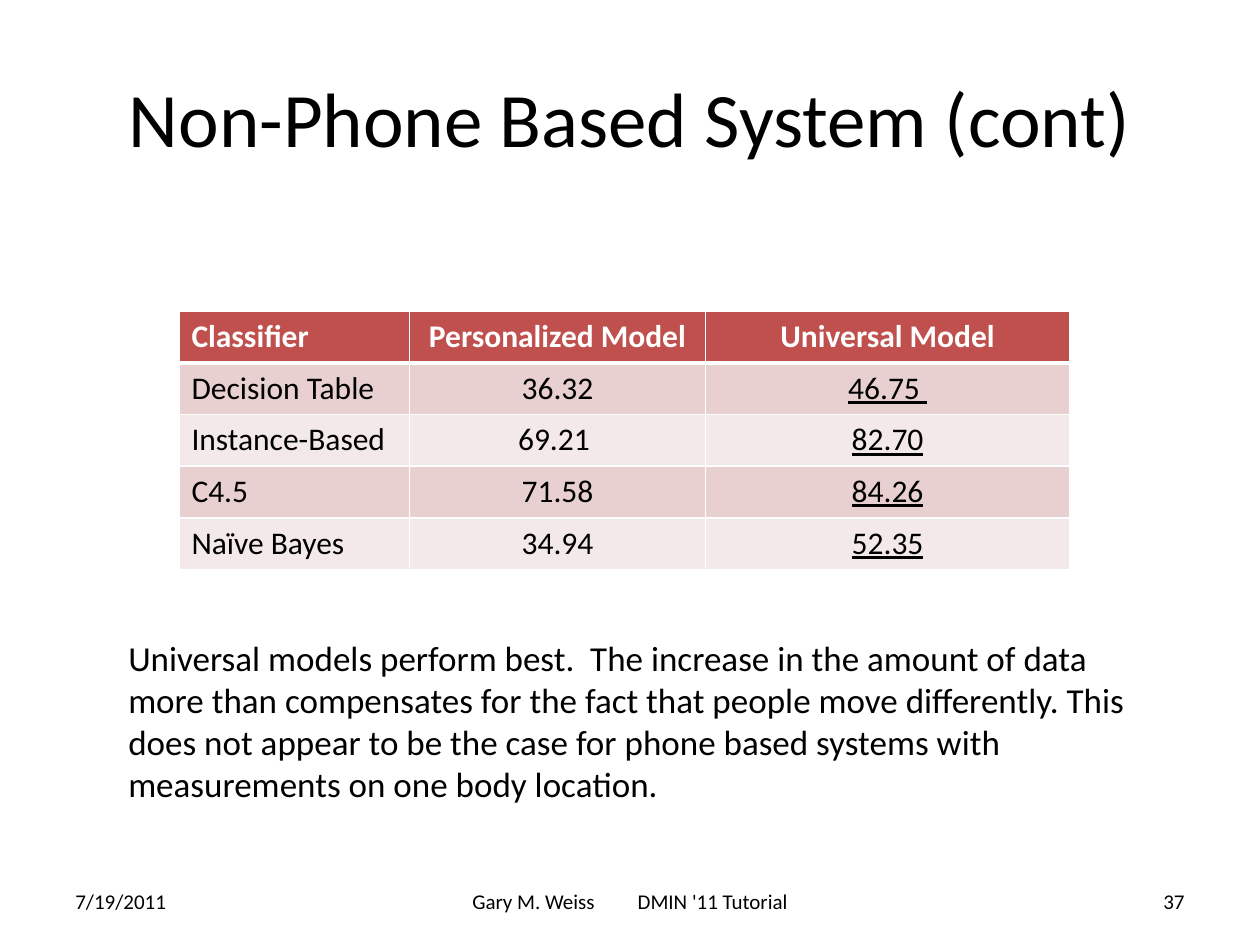
"""Build the slide comparing personalized and universal classifier models."""
from lxml import etree
from pptx import Presentation
from pptx import util as u
from pptx.dml.color import RGBColor
from pptx.enum import text
from pptx.oxml.ns import qn

WIDTH, HEIGHT = 10, 7.5
FONT, BLACK, WHITE = "Calibri", "000000", "FFFFFF"
HEADER_FILL, BAND_FILLS = "C0504D", ("E8D0D0", "F4E9E9")
LEFT, CENTER, RIGHT = text.PP_ALIGN.LEFT, text.PP_ALIGN.CENTER, text.PP_ALIGN.RIGHT
TOP, MIDDLE = text.MSO_ANCHOR.TOP, text.MSO_ANCHOR.MIDDLE

TITLE = "Non-Phone Based System (cont)"
RESULTS = [
    ("Classifier", "Personalized Model", "Universal Model"),
    ("Decision Table", "36.32", "46.75 "),
    ("Instance-Based", "69.21 ", "82.70"),
    ("C4.5", "71.58", "84.26"),
    ("Naïve Bayes", "34.94", "52.35"),
]
CONCLUSION = (
    "Universal models perform best.  The increase in the amount of data more than "
    "compensates for the fact that people move differently. This does not appear to be "
    "the case for phone based systems with measurements on one body location."
)
DATE, AUTHOR, EVENT, NUMBER = "7/19/2011", "Gary M. Weiss", "DMIN '11 Tutorial", "37"

MARGIN = 0.05 * WIDTH
FOOTER_TOP, FOOTER_HEIGHT, SIDE_WIDTH, MIDDLE_WIDTH = 6.95, 0.4, 2.33, 3.17
TABLE_LEFT, TABLE_TOP, ROW_HEIGHT = 1.42, 2.47, 0.41
COLUMN_WIDTHS = (1.83, 2.35, 2.89)
FOOTER_GAP = 21.7


def color(value):
    return RGBColor.from_string(value)


def add_span(para, words, size, ink=BLACK, bold=False, underline=False, tracking=0):
    span = para.add_run()
    span.text = words
    font = span.font
    font.name, font.size, font.bold, font.underline = FONT, u.Pt(size), bold, underline
    font.color.rgb = color(ink)
    if tracking:
        span._r.get_or_add_rPr().set("spc", str(round(tracking * 100)))


def add_box(page, area, spans, size, align=LEFT, anchor=MIDDLE):
    box = page.shapes.add_textbox(*map(u.Inches, area))
    frame = box.text_frame
    frame.word_wrap, frame.vertical_anchor = True, anchor
    para = frame.paragraphs[0]
    para.alignment = align
    for words, tracking in spans:
        add_span(para, words, size, tracking=tracking)


def add_borders(cell, row):
    weights = {"L": 1, "R": 1, "T": 3 if row == 1 else 1, "B": 3 if row == 0 else 1}
    properties = cell._tc.get_or_add_tcPr()
    for side, weight in weights.items():
        line = etree.SubElement(properties, qn(f"a:ln{side}"), w=str(u.Pt(weight)))
        fill = etree.SubElement(line, qn("a:solidFill"))
        etree.SubElement(fill, qn("a:srgbClr"), val=WHITE)


def add_results(page):
    rows, columns = len(RESULTS), len(COLUMN_WIDTHS)
    area = (TABLE_LEFT, TABLE_TOP, sum(COLUMN_WIDTHS), rows * ROW_HEIGHT)
    table = page.shapes.add_table(rows, columns, *map(u.Inches, area)).table
    for column, width in zip(table.columns, COLUMN_WIDTHS):
        column.width = u.Inches(width)
    for r, record in enumerate(RESULTS):
        header = r == 0
        for c, words in enumerate(record):
            cell = table.cell(r, c)
            add_borders(cell, r)
            cell.fill.solid()
            cell.fill.fore_color.rgb = color(HEADER_FILL if header else BAND_FILLS[(r - 1) % 2])
            para = cell.text_frame.paragraphs[0]
            para.alignment = CENTER if c else LEFT
            best = not header and c == columns - 1
            add_span(para, words, 18, WHITE if header else BLACK, header, best)


def add_footer(page):
    parts = [
        (MARGIN, SIDE_WIDTH, [(DATE, 0)], LEFT),
        ((WIDTH - MIDDLE_WIDTH) / 2, MIDDLE_WIDTH,
         [(AUTHOR, 0), (" ", FOOTER_GAP), (EVENT, 0)], CENTER),
        (WIDTH - MARGIN - SIDE_WIDTH, SIDE_WIDTH, [(NUMBER, 0)], RIGHT),
    ]
    for left, width, spans, align in parts:
        add_box(page, (left, FOOTER_TOP, width, FOOTER_HEIGHT), spans, 12, align)


def main():
    deck = Presentation()
    deck.slide_width, deck.slide_height = u.Inches(WIDTH), u.Inches(HEIGHT)
    page = deck.slides.add_slide(deck.slide_layouts[6])
    add_box(page, (MARGIN, 0.3, WIDTH - 2 * MARGIN, 1.25), [(TITLE, 0)], 44, CENTER)
    add_results(page)
    add_footer(page)
    add_box(page, (0.92, 5, 8.33, 1.45), [(CONCLUSION, 0)], 20, anchor=TOP)
    deck.save("out.pptx")


if __name__ == "__main__":
    main()
